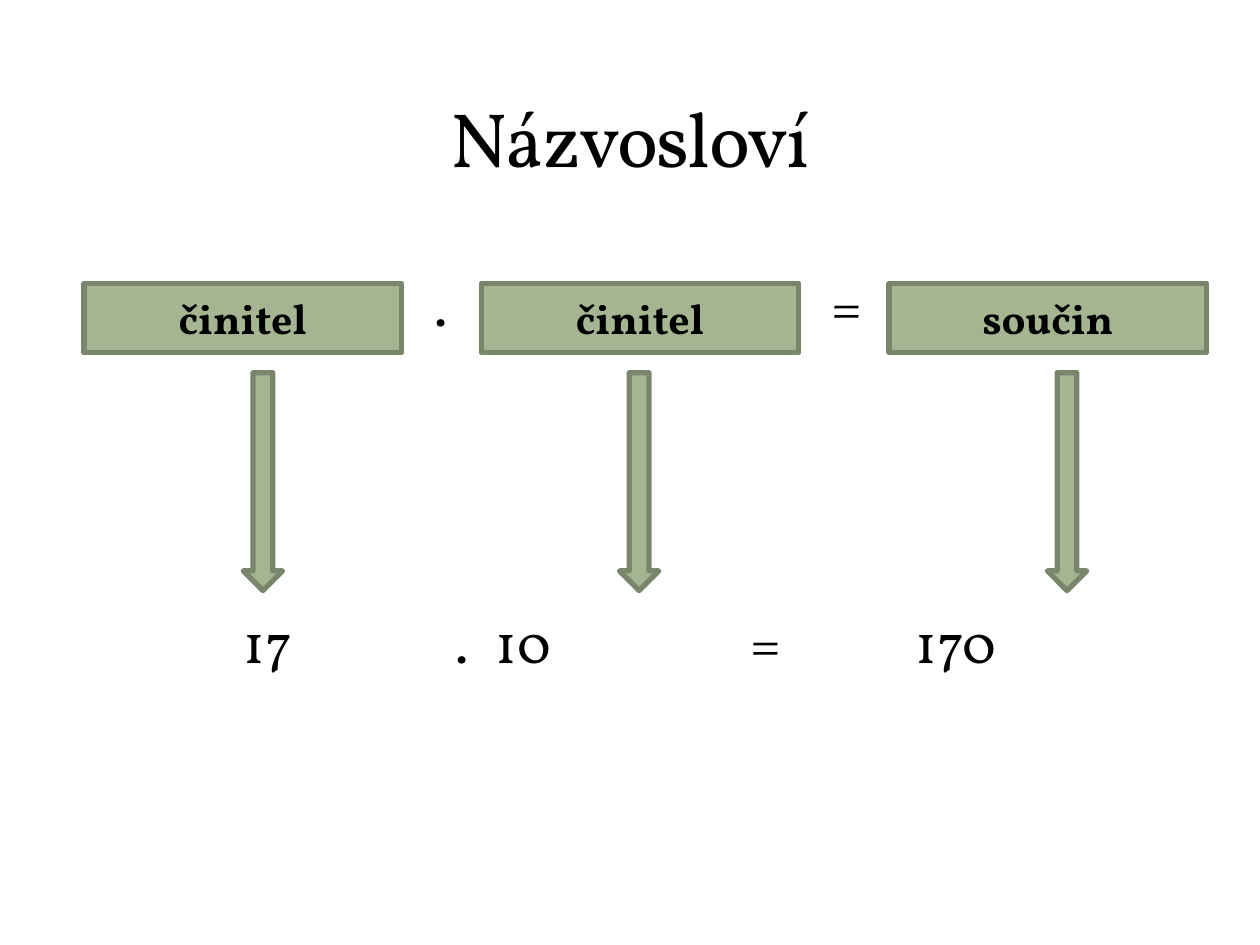
from dataclasses import dataclass
from pptx import Presentation
from pptx.dml.color import RGBColor
from pptx.enum.shapes import MSO_SHAPE
from pptx.enum.text import MSO_ANCHOR, MSO_AUTO_SIZE, PP_ALIGN
from pptx.oxml.ns import qn
from pptx.util import Pt


@dataclass(frozen=True)
class Theme:
    """Colours, font and type sizes of the slide."""
    font: str = "Vollkorn"
    ink: RGBColor = RGBColor(0, 0, 0)
    fill: RGBColor = RGBColor(0xA5, 0xB5, 0x92)
    edge: RGBColor = RGBColor(0x7A, 0x86, 0x6C)
    title: int = 44
    sign: int = 32
    label: int = 24


THEME = Theme()
TERMS = (("činitel", 48, 139), ("činitel", 275, 354), ("součin", 508, 598.5))
SIGNS = ((".", 241, 28), ("=", 468, 22.5))
TABS = (72, 193, 216, 362, 456)


def style(frame, size, bold=False, align=None):
    """Format the first paragraph of a text frame and return it."""
    para = frame.paragraphs[0]
    para.alignment = align
    for run in para.runs:
        font = run.font
        font.name, font.size, font.bold = THEME.font, Pt(size), bold
        font.color.rgb = THEME.ink
    return para


def add_title(slide, text):
    """Place the title in its placeholder."""
    title = slide.shapes.title
    title.left, title.top = Pt(36), Pt(12.24)
    title.width, title.height = Pt(648), Pt(95.76)
    frame = title.text_frame
    frame.text = text
    frame.vertical_anchor = MSO_ANCHOR.BOTTOM
    para = style(frame, THEME.title, align=PP_ALIGN.CENTER)
    para.runs[0].font._element.set("spc", "-100")


def add_block(slide, kind, left, top, width, height):
    """Add a green preset shape with a darker edge."""
    block = slide.shapes.add_shape(kind, Pt(left), Pt(top), Pt(width), Pt(height))
    block.shadow.inherit = False
    block.fill.solid()
    block.fill.fore_color.rgb = THEME.fill
    block.line.color.rgb = THEME.edge
    block.line.width = Pt(3)
    return block


def add_term(slide, text, left, tip):
    """Add a named box and the arrow below it."""
    box = add_block(slide, MSO_SHAPE.RECTANGLE, left, 162, 181.5, 39.6)
    box.text_frame.text = text
    box.text_frame.vertical_anchor = MSO_ANCHOR.MIDDLE
    style(box.text_frame, THEME.label, True, PP_ALIGN.CENTER)
    add_block(slide, MSO_SHAPE.DOWN_ARROW, tip, 213, 22.5, 124.5)


def add_text(slide, text, left, top, width):
    """Add a line of large text and return its paragraph."""
    box = slide.shapes.add_textbox(Pt(left), Pt(top), Pt(width), Pt(46))
    frame = box.text_frame
    frame.word_wrap = True
    frame.auto_size = MSO_AUTO_SIZE.SHAPE_TO_FIT_TEXT
    frame.text = text
    return style(frame, THEME.sign)


def set_tabs(para, stops):
    """Give a paragraph left tab stops."""
    props = para._p.get_or_add_pPr()
    tabs = props.makeelement(qn("a:tabLst"), {})
    props.append(tabs)
    for stop in stops:
        tab = tabs.makeelement(qn("a:tab"), {"pos": str(int(Pt(stop))), "algn": "l"})
        tabs.append(tab)


def main():
    """Build and save the slide."""
    deck = Presentation()
    deck.slide_width, deck.slide_height = Pt(720), Pt(540)
    slide = deck.slides.add_slide(deck.slide_layouts[5])
    add_title(slide, "Názvosloví")
    for term in TERMS:
        add_term(slide, *term)
    for text, left, width in SIGNS:
        add_text(slide, text, left, 151, width)
    sums = add_text(slide, "\t17\t.\t10\t=\t170", 60, 343.5, 607)
    set_tabs(sums, TABS)
    deck.save("out.pptx")


if __name__ == "__main__":
    main()
